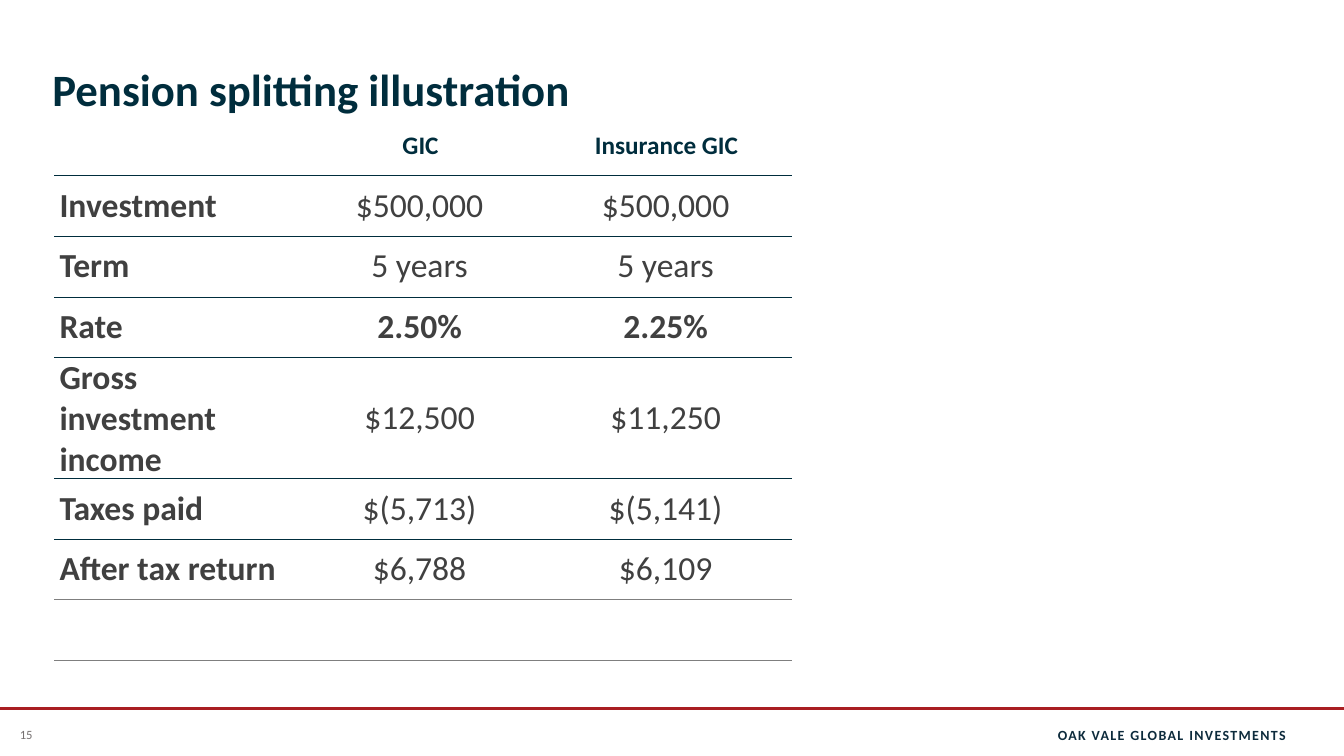
import lxml.etree
import pptx
import pptx.dml.color
import pptx.enum.shapes
import pptx.enum.text
import pptx.oxml.ns
import pptx.util
from pptx.util import Cm, Pt

ALIGN = pptx.enum.text.PP_ALIGN
ANCHOR = pptx.enum.text.MSO_ANCHOR
FONT = "Calibri"
COLORS = {
    "navy": "002D3D",
    "footer": "0D2B3C",
    "body": "404040",
    "grey": "767171",
    "rule": "7F7F7F",
    "red": "A91E22",
}
HEADER = ("", "GIC", "Insurance GIC")
ROWS = (
    ("Investment", "$500,000", "$500,000"),
    ("Term", "5 years", "5 years"),
    ("Rate", "2.50%", "2.25%"),
    ("Gross investment income", "$12,500", "$11,250"),
    ("Taxes paid", "$(5,713)", "$(5,141)"),
    ("After tax return", "$6,788", "$6,109"),
)
BOLD_VALUES = "Rate"


def rgb(name):
    return pptx.dml.color.RGBColor.from_string(COLORS[name])


def style(para, size, color, bold=False, align=ALIGN.LEFT):
    para.alignment = align
    para.font.name = FONT
    para.font.size = Pt(size)
    para.font.bold = bold
    para.font.color.rgb = rgb(color)


def add_text(page, box, text, anchor, margins, **look):
    frame = page.shapes.add_textbox(*(Cm(v) for v in box)).text_frame
    frame.word_wrap = True
    frame.vertical_anchor = anchor
    frame.margin_left = frame.margin_right = Cm(margins[0])
    frame.margin_top = frame.margin_bottom = Cm(margins[1])
    para = frame.paragraphs[0]
    span = para.add_run()
    span.text = text
    style(para, **look)
    return span


def set_borders(cell, top, bottom):
    """Draw the horizontal edges named by colour and clear the others."""
    props = cell._tc.get_or_add_tcPr()
    edges = (("a:lnL", None), ("a:lnR", None), ("a:lnT", top), ("a:lnB", bottom))
    for place, (tag, color) in enumerate(edges):
        line = lxml.etree.Element(pptx.oxml.ns.qn(tag), w=str(Pt(0.5)))
        if color:
            fill = lxml.etree.SubElement(line, pptx.oxml.ns.qn("a:solidFill"))
            lxml.etree.SubElement(fill, pptx.oxml.ns.qn("a:srgbClr"), val=COLORS[color])
        else:
            lxml.etree.SubElement(line, pptx.oxml.ns.qn("a:noFill"))
        props.insert(place, line)


def fill_cell(cell, text, **look):
    cell.vertical_anchor = ANCHOR.MIDDLE
    cell.margin_left = cell.margin_right = Cm(0.13)
    cell.margin_top = cell.margin_bottom = 0
    if text:
        # The trailing no-break space keeps the centring of the values
        cell.text = f"{text} "
    style(cell.text_frame.paragraphs[0], **look)


def add_comparison(page, box):
    left, top, width, height = box
    lines = (HEADER, *ROWS, ("", "", ""))
    table = page.shapes.add_table(
        len(lines), len(HEADER), Cm(left), Cm(top), Cm(width), Cm(height)).table
    table.first_row = table.horz_banding = False
    last = len(lines) - 1
    # Edge colours from the top of the table to its bottom
    edges = [None] + ["navy"] * (last - 1) + ["rule"] * 2

    for r, line in enumerate(lines):
        for c, text in enumerate(line):
            cell = table.cell(r, c)
            cell.fill.background()
            set_borders(cell, edges[r], edges[r + 1])
            fill_cell(
                cell, text,
                size=24 if r else 18,
                color="body" if r else "navy",
                bold=r == 0 or c == 0 or line[0] == BOLD_VALUES,
                align=ALIGN.CENTER if c else ALIGN.LEFT)
    table.cell(last, 0).merge(table.cell(last, len(HEADER) - 1))


def add_footer(page, box):
    left, top, width, height = box
    # Red rule across the page
    rule = page.shapes.add_connector(
        pptx.enum.shapes.MSO_CONNECTOR.STRAIGHT,
        Cm(left), Cm(top), Cm(left + width), Cm(top))
    rule.line.color.rgb = rgb("red")
    rule.line.width = Pt(2.25)
    lxml.etree.SubElement(rule._element.spPr, pptx.oxml.ns.qn("a:effectLst"))

    # Page number and company name
    text_top, text_height = top + 0.15, height - 0.15
    add_text(page, (left, text_top, 1.32, text_height), "15", ANCHOR.MIDDLE,
             (0.25, 0.13), size=9, color="grey", align=ALIGN.CENTER)
    name = add_text(page, (left + 24.56, text_top, 7.85, text_height),
                    "OAK VALE GLOBAL INVESTMENTS", ANCHOR.MIDDLE, (0, 0.2),
                    size=10, color="footer", bold=True, align=ALIGN.RIGHT)
    name._r.get_or_add_rPr().set("spc", "100")


def build_page(deck):
    page = deck.slides.add_slide(deck.slide_layouts[6])
    add_footer(page, (0, 17.86, 33.87, 1.17))
    add_comparison(page, (1.37, 2.9, 18.6, 12.22))
    add_text(page, (1.32, 0, 30.99, 2.9), "Pension splitting illustration",
             ANCHOR.BOTTOM, (0, 0), size=32, color="navy", bold=True)


def main():
    deck = pptx.Presentation()
    deck.slide_width, deck.slide_height = Cm(33.87), Cm(19.05)
    build_page(deck)
    deck.save("out.pptx")


if __name__ == "__main__":
    main()
